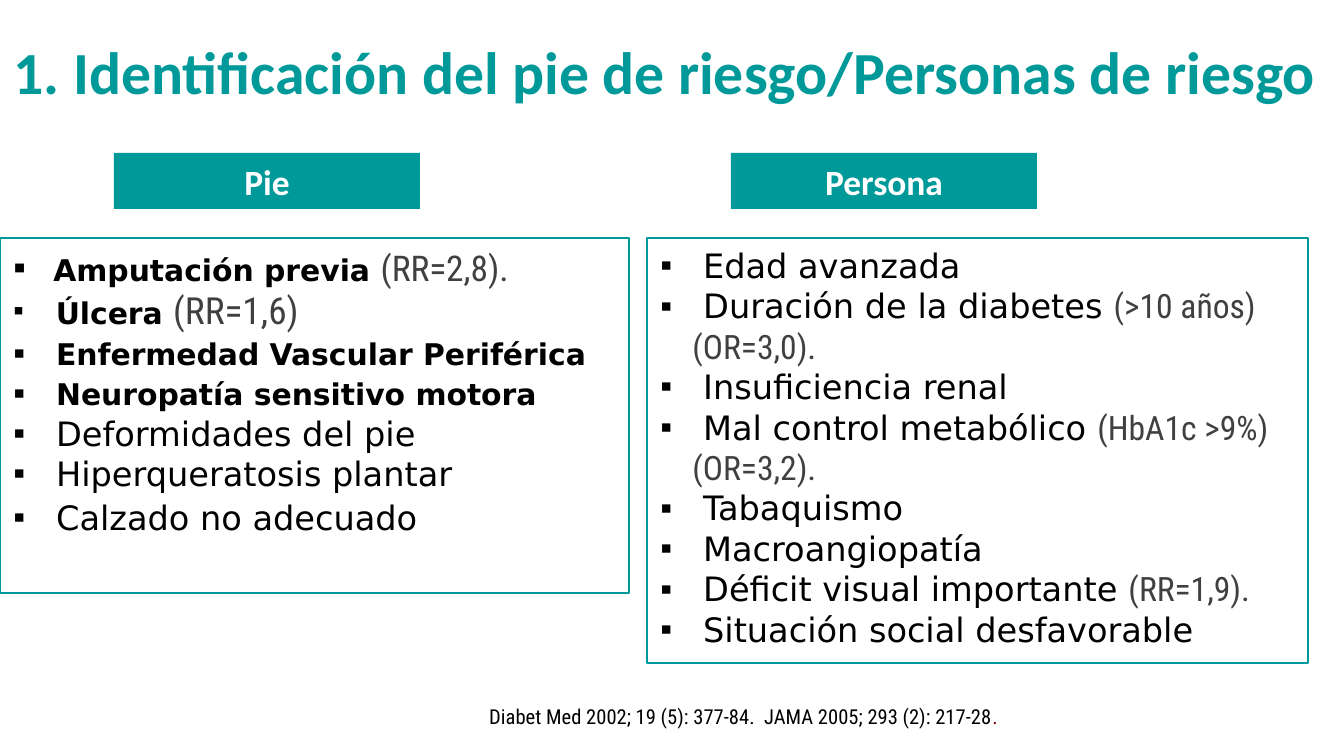
"""Builds the slide on identifying the foot and the people at risk."""
from lxml import etree
from pptx import Presentation
from pptx.dml.color import RGBColor
from pptx.enum.shapes import MSO_SHAPE
from pptx.enum.text import MSO_ANCHOR, MSO_AUTO_SIZE, PP_ALIGN
from pptx.oxml.ns import qn
from pptx.util import Pt

RECTANGLE = MSO_SHAPE.RECTANGLE
TOP, MIDDLE = MSO_ANCHOR.TOP, MSO_ANCHOR.MIDDLE
NO_AUTOFIT = MSO_AUTO_SIZE.NONE
LEFT, CENTER = PP_ALIGN.LEFT, PP_ALIGN.CENTER
EMU_PER_PX = 914400 / 134.4
TWO_CONTENT_LAYOUT = 3
HANG = 32

COLORS = {
    "teal": "009999",
    "white": "FFFFFF",
    "black": "000000",
    "gray": "404040",
    "maroon": "800000",
}
STYLES = {
    "title": ("Calibri", 32, True, "teal"),
    "header": ("Calibri", 19, True, "white"),
    "lead": ("Calibri", 19, False, "black"),
    "strong": ("DejaVu Sans", 16, True, "black"),
    "space": ("DejaVu Sans", 18, False, "black"),
    "plain": ("DejaVu Sans", 18, False, "black"),
    "note": ("Roboto Condensed", 18, False, "gray"),
    "note large": ("Roboto Condensed", 19, False, "gray"),
    "note largest": ("Roboto Condensed", 20, False, "gray"),
    "source": ("Roboto Condensed", 11, False, "black"),
    "source end": ("Roboto Condensed", 11, False, "maroon"),
}

TITLE = "1. Identificación del pie de riesgo/Personas de riesgo"
TITLE_AREA = (0, 28, 1356, 86)
HEADER_TOP, HEADER_WIDTH, HEADER_HEIGHT = 153, 306, 56
SOURCE_AREA = (476, 697, 704, 39)
SOURCE = [
    ("Diabet Med 2002; 19 (5): 377-84.  JAMA 2005; 293 (2): 217-28", "source"),
    (".", "source end"),
]

FOOT_RISKS = [
    (23.5, [(" ", "lead"), ("Amputación previa ", "strong"), ("(RR=2,8).", "note large")]),
    (23.5, [(" Úlcera ", "strong"), ("(RR=1,6)", "note largest")]),
    (21.5, [(" ", "space"), ("Enfermedad Vascular Periférica", "strong")]),
    (21.5, [(" ", "space"), ("Neuropatía sensitivo motora", "strong")]),
    (21.5, [(" Deformidades del pie", "plain")]),
    (21.5, [(" Hiperqueratosis plantar", "plain")]),
    (23.5, [(" Calzado no adecuado", "plain")]),
]
PERSON_RISKS = [
    (21.65, [(" Edad avanzada", "plain")]),
    (21.65, [(" Duración de la diabetes ", "plain"), ("(>10 años) (OR=3,0).", "note")]),
    (21.65, [(" Insuficiencia renal", "plain")]),
    (21.65, [(" Mal control metabólico ", "plain"), ("(HbA1c >9%) (OR=3,2).", "note")]),
    (21.65, [(" Tabaquismo", "plain")]),
    (21.65, [(" Macroangiopatía", "plain")]),
    (21.65, [(" Déficit visual importante ", "plain"), ("(RR=1,9).", "note")]),
    (21.65, [(" Situación social desfavorable", "plain")]),
]
COLUMNS = [
    ("Pie", 114, (0, 238, 629, 355), FOOT_RISKS),
    ("Persona", 731, (647, 238, 661, 425), PERSON_RISKS),
]


def px(length):
    return round(length * EMU_PER_PX)


def color(name):
    return RGBColor.from_string(COLORS[name])


def place(shape, area):
    shape.left, shape.top, shape.width, shape.height = map(px, area)


def set_font(font, style):
    font.name, size, font.bold, color_name = STYLES[style]
    font.size = Pt(size)
    font.color.rgb = color(color_name)


def prepare_frame(shape, anchor=TOP, wrap=True):
    frame = shape.text_frame
    frame.auto_size = NO_AUTOFIT
    frame.word_wrap = wrap
    frame.vertical_anchor = anchor
    return frame


def write_line(para, text, style, align):
    para.text = text
    para.alignment = align
    set_font(para.font, style)


def write_spans(para, spans):
    for text, style in spans:
        span = para.add_run()
        span.text = text
        set_font(span.font, style)


def add_bullet(para):
    properties = para._p.get_or_add_pPr()
    properties.set("marL", str(px(HANG)))
    properties.set("indent", str(-px(HANG)))
    etree.SubElement(properties, qn("a:buChar")).set("char", "▪")


def fill_list(box, area, items):
    place(box, area)
    box.line.color.rgb = color("teal")
    box.line.width = Pt(0.75)
    frame = prepare_frame(box)
    for index, (line_height, spans) in enumerate(items):
        para = frame.add_paragraph() if index else frame.paragraphs[0]
        add_bullet(para)
        para.alignment = LEFT
        para.space_before = Pt(0)
        para.line_spacing = Pt(line_height)
        write_spans(para, spans)


def add_header(page, text, left):
    area = (left, HEADER_TOP, HEADER_WIDTH, HEADER_HEIGHT)
    header = page.shapes.add_shape(RECTANGLE, *map(px, area))
    header.shadow.inherit = False
    header.fill.solid()
    header.fill.fore_color.rgb = color("teal")
    header.line.fill.background()
    frame = prepare_frame(header, MIDDLE)
    write_line(frame.paragraphs[0], text, "header", CENTER)


def main():
    deck = Presentation()
    deck.slide_width, deck.slide_height = px(1344), px(756)
    page = deck.slides.add_slide(deck.slide_layouts[TWO_CONTENT_LAYOUT])

    title = page.shapes.title
    place(title, TITLE_AREA)
    frame = prepare_frame(title, wrap=False)
    write_line(frame.paragraphs[0], TITLE, "title", LEFT)

    for index, (heading, left, area, items) in enumerate(COLUMNS, start=1):
        fill_list(page.placeholders[index], area, items)
        add_header(page, heading, left)

    source = page.shapes.add_textbox(*map(px, SOURCE_AREA))
    write_spans(prepare_frame(source).paragraphs[0], SOURCE)
    deck.save("out.pptx")


if __name__ == "__main__":
    main()
